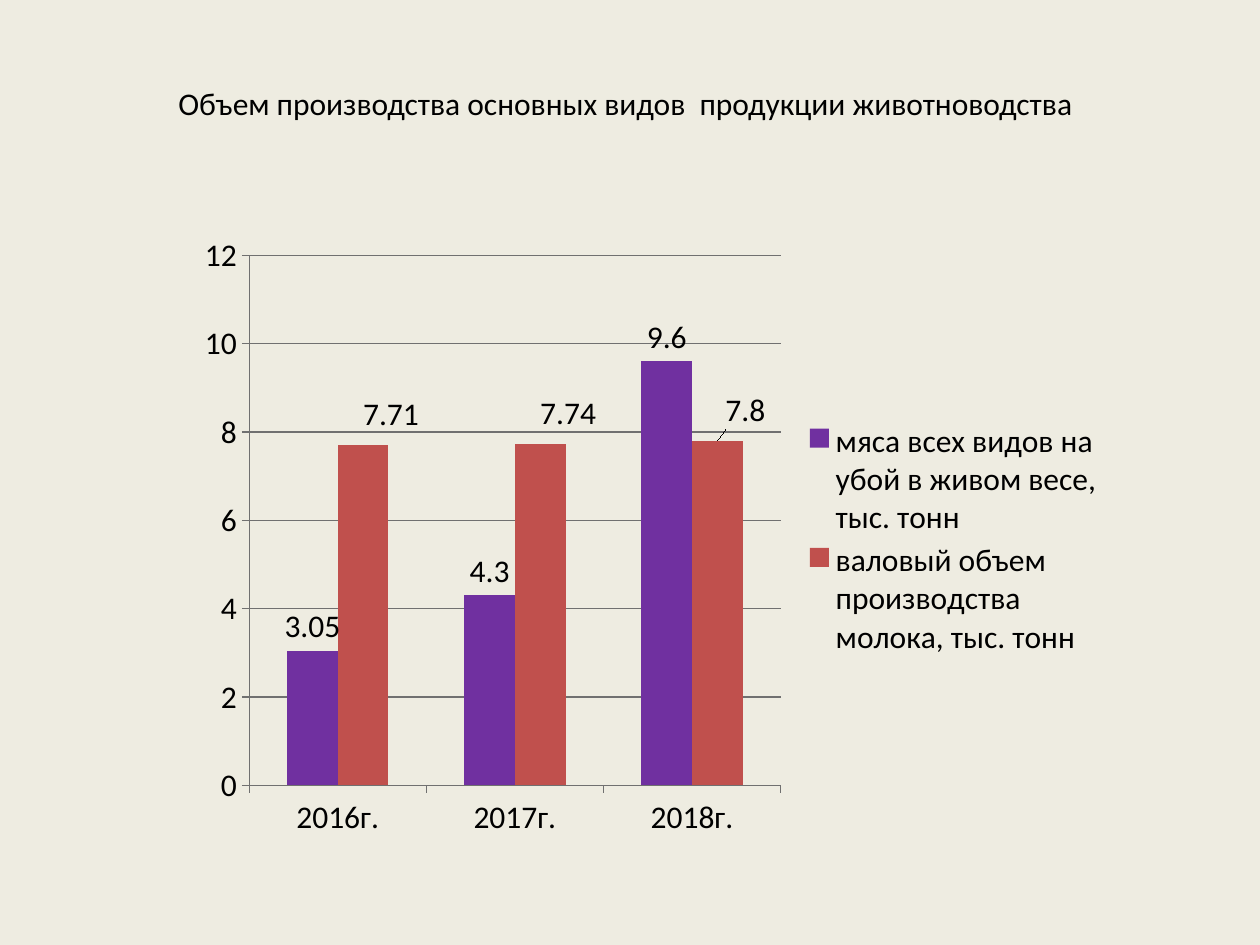
from lxml import etree
from pptx import Presentation
from pptx.chart.data import CategoryChartData
from pptx.dml.color import RGBColor
from pptx.enum import chart as charts, text
from pptx.oxml.ns import qn
from pptx.util import Inches, Pt

FONT = "Calibri"
BACKGROUND = RGBColor(0xEE, 0xEC, 0xE1)
BLACK = RGBColor(0, 0, 0)
PURPLE = RGBColor(0x70, 0x30, 0xA0)
RED = RGBColor(0xC0, 0x50, 0x4D)
GRAY = RGBColor(0x70, 0x70, 0x70)

CATEGORIES = ["2016г.", "2017г.", "2018г."]
SERIES = [
    ("мяса всех видов на убой в живом весе, тыс. тонн", [3.05, 4.3, 9.6], PURPLE),
    ("валовый объем производства молока, тыс. тонн", [7.71, 7.74, 7.8], RED),
]
MILK_LABEL_SHIFT = 0.03, -0.01


def set_font(font):
    font.name = FONT
    font.size = Pt(18)
    font.color.rgb = BLACK


def set_layout(parent, index, **values):
    """Place a chart part by fractions of the chart area."""
    for old in parent.findall(qn("c:layout")):
        parent.remove(old)
    layout = etree.Element(qn("c:layout"))
    manual = etree.SubElement(layout, qn("c:manualLayout"))
    for name, value in values.items():
        etree.SubElement(manual, qn(f"c:{name}")).set("val", str(value))
    parent.insert(index, layout)


def add_title(slide, title):
    box = slide.shapes.add_textbox(Inches(0.43), 0, Inches(9.07), Inches(2.33))
    frame = box.text_frame
    frame.word_wrap = True
    frame.vertical_anchor = text.MSO_ANCHOR.MIDDLE
    frame.margin_bottom = Inches(0.74)
    paragraph = frame.paragraphs[0]
    paragraph.text = title
    paragraph.alignment = text.PP_ALIGN.CENTER
    set_font(paragraph.font)


def style_axes(chart):
    chart.value_axis.has_major_gridlines = True
    lines = [chart.value_axis.major_gridlines.format.line]
    for axis in (chart.category_axis, chart.value_axis):
        axis.major_tick_mark = charts.XL_TICK_MARK.OUTSIDE
        axis.minor_tick_mark = charts.XL_TICK_MARK.NONE
        lines.append(axis.format.line)
    for line in lines:
        line.color.rgb = GRAY
        line.width = Pt(0.75)
    chart.value_axis.minimum_scale = 0
    chart.value_axis.maximum_scale = 12
    chart.value_axis.major_unit = 2


def style_series(series, color):
    series.format.fill.solid()
    series.format.fill.fore_color.rgb = color
    series.invert_if_negative = False
    labels = series.data_labels
    labels.show_value = True
    labels.position = charts.XL_LABEL_POSITION.OUTSIDE_END


def shift_labels(series, x, y):
    for index in range(len(CATEGORIES)):
        label = series.points[index].data_label
        label.position = charts.XL_LABEL_POSITION.OUTSIDE_END
    for label in series.data_labels._element.findall(qn("c:dLbl")):
        set_layout(label, 1, x=x, y=y)


def add_production_chart(slide):
    data = CategoryChartData()
    data.categories = CATEGORIES
    for name, values, _ in SERIES:
        data.add_series(name, values)
    chart = slide.shapes.add_chart(
        charts.XL_CHART_TYPE.COLUMN_CLUSTERED,
        Inches(1.46), Inches(1.78), Inches(7.4), Inches(4.95), data).chart
    set_font(chart.font)
    chart.has_title = False
    style_axes(chart)

    plot = chart.plots[0]
    plot.gap_width = 150
    plot.vary_by_categories = False
    for series, (_, _, color) in zip(plot.series, SERIES):
        style_series(series, color)
    shift_labels(plot.series[1], *MILK_LABEL_SHIFT)

    chart.has_legend = True
    chart.legend.position = charts.XL_LEGEND_POSITION.RIGHT
    chart.legend.include_in_layout = False
    set_layout(chart.legend._element, 1, xMode="edge", yMode="edge",
               x=0.66, y=0.31, w=0.33, h=0.39)
    plot_area = chart._chartSpace.find(".//" + qn("c:plotArea"))
    set_layout(plot_area, 0, layoutTarget="inner", xMode="edge", yMode="edge",
               x=0.07, y=0.05, w=0.57, h=0.85)


def main():
    presentation = Presentation()
    presentation.slide_width = Inches(10)
    presentation.slide_height = Inches(7.5)
    slide = presentation.slides.add_slide(presentation.slide_layouts[6])
    slide.background.fill.solid()
    slide.background.fill.fore_color.rgb = BACKGROUND
    add_title(slide, "Объем производства основных видов  продукции животноводства")
    add_production_chart(slide)
    presentation.save("out.pptx")


if __name__ == "__main__":
    main()
